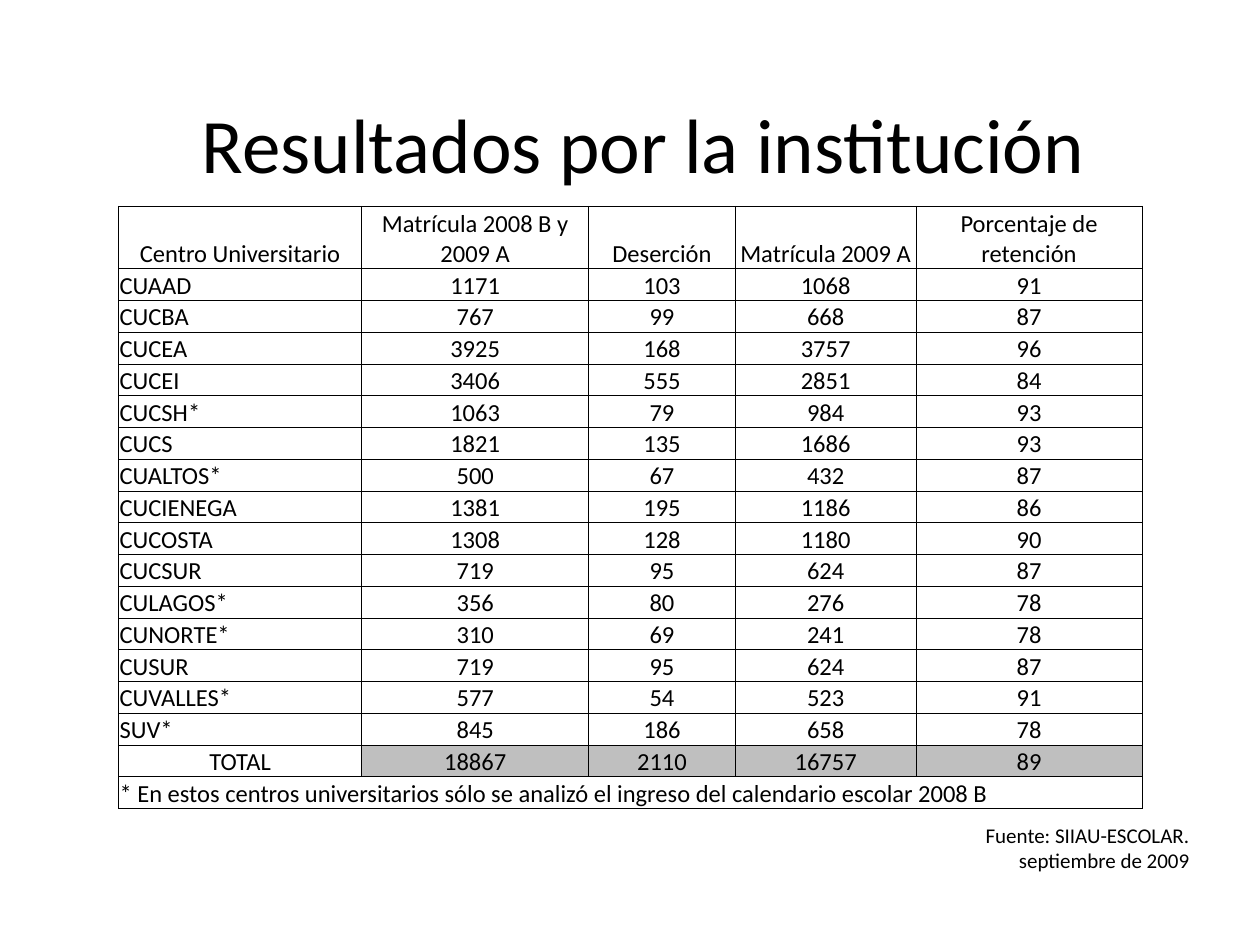
from pptx import Presentation
from pptx.dml.color import RGBColor
from pptx.enum.text import MSO_ANCHOR, PP_ALIGN
from pptx.oxml.ns import qn
from pptx.util import Cm, Pt
from lxml.etree import SubElement

FONT = "Calibri"
BLACK = RGBColor(0x00, 0x00, 0x00)
WHITE = RGBColor(0xFF, 0xFF, 0xFF)
GRAY = RGBColor(0xBF, 0xBF, 0xBF)

COL_WIDTHS = [4.9, 4.58, 2.95, 3.65, 4.55]
HEADER_HEIGHT, ROW_HEIGHT = 1.26, 0.64
HEADER = ["Centro Universitario", "Matrícula 2008 B y 2009 A", "Deserción",
          "Matrícula 2009 A", "Porcentaje de retención"]
CENTERS = [
    ("CUAAD", 1171, 103, 1068, 91),
    ("CUCBA", 767, 99, 668, 87),
    ("CUCEA", 3925, 168, 3757, 96),
    ("CUCEI", 3406, 555, 2851, 84),
    ("CUCSH*", 1063, 79, 984, 93),
    ("CUCS", 1821, 135, 1686, 93),
    ("CUALTOS*", 500, 67, 432, 87),
    ("CUCIENEGA", 1381, 195, 1186, 86),
    ("CUCOSTA", 1308, 128, 1180, 90),
    ("CUCSUR", 719, 95, 624, 87),
    ("CULAGOS*", 356, 80, 276, 78),
    ("CUNORTE*", 310, 69, 241, 78),
    ("CUSUR", 719, 95, 624, 87),
    ("CUVALLES*", 577, 54, 523, 91),
    ("SUV*", 845, 186, 658, 78),
]
TOTAL = ("TOTAL", 18867, 2110, 16757, 89)
NOTE = ("* En estos centros universitarios sólo se analizó el ingreso "
        "del calendario escolar 2008 B")


def add_run(p, text, size, align):
    p.alignment = align
    r = p.add_run()
    r.text = str(text)
    r.font.name = FONT
    r.font.size = Pt(size)
    r.font.color.rgb = BLACK


def add_text(s, box, lines, size, align, anchor=MSO_ANCHOR.TOP):
    tf = s.shapes.add_textbox(*map(Cm, box)).text_frame
    tf.word_wrap = True
    tf.vertical_anchor = anchor
    for i, line in enumerate(lines):
        p = tf.add_paragraph() if i else tf.paragraphs[0]
        add_run(p, line, size, align)


def set_borders(cell, bottom):
    tcPr = cell._tc.get_or_add_tcPr()
    for side, width in (("L", 0.5), ("R", 0.5), ("T", 0.5), ("B", bottom)):
        ln = SubElement(tcPr, qn(f"a:ln{side}"), w=str(Pt(width)))
        fill = SubElement(ln, qn("a:solidFill"))
        SubElement(fill, qn("a:srgbClr"), val=str(BLACK))


def format_cell(cell, text, align, color=WHITE, bottom=0.5):
    cell.margin_left = cell.margin_right = cell.margin_top = Cm(0.02)
    cell.margin_bottom = 0
    cell.vertical_anchor = MSO_ANCHOR.BOTTOM
    set_borders(cell, bottom)
    cell.fill.solid()
    cell.fill.fore_color.rgb = color
    add_run(cell.text_frame.paragraphs[0], text, 14, align)


def add_retention_table(s):
    rows = [HEADER, *CENTERS, TOTAL]
    heights = [HEADER_HEIGHT] + [ROW_HEIGHT] * len(rows)
    table = s.shapes.add_table(
        len(heights), len(COL_WIDTHS), Cm(2.39), Cm(4.16),
        Cm(sum(COL_WIDTHS)), Cm(sum(heights))).table
    table.first_row = table.horz_banding = False
    for col, width in zip(table.columns, COL_WIDTHS):
        col.width = Cm(width)
    for row, height in zip(table.rows, heights):
        row.height = Cm(height)

    # Header, centers and total
    for i, values in enumerate(rows):
        for j, value in enumerate(values):
            is_center_name = j == 0 and values in CENTERS
            align = PP_ALIGN.LEFT if is_center_name else PP_ALIGN.CENTER
            color = GRAY if values is TOTAL and j else WHITE
            format_cell(table.cell(i, j), value, align, color)

    # Note across the full width
    last = len(rows)
    note = table.cell(last, 0)
    note.merge(table.cell(last, len(COL_WIDTHS) - 1))
    format_cell(note, NOTE, PP_ALIGN.LEFT, bottom=1)
    for j in range(1, len(COL_WIDTHS)):
        set_borders(table.cell(last, j), 1)


def main():
    prs = Presentation()
    prs.slide_width, prs.slide_height = Cm(25.4), Cm(19.05)
    s = prs.slides.add_slide(prs.slide_layouts[6])

    # Title
    add_text(s, (2.18, 1.4, 21.59, 2.97), ["Resultados por la institución"],
             44, PP_ALIGN.CENTER, MSO_ANCHOR.MIDDLE)
    # Source
    add_text(s, (17.65, 16.46, 6.58, 1.27),
             ["Fuente: SIIAU-ESCOLAR.", "septiembre de 2009"],
             12, PP_ALIGN.RIGHT)
    # Table
    add_retention_table(s)

    prs.save("out.pptx")


if __name__ == "__main__":
    main()
